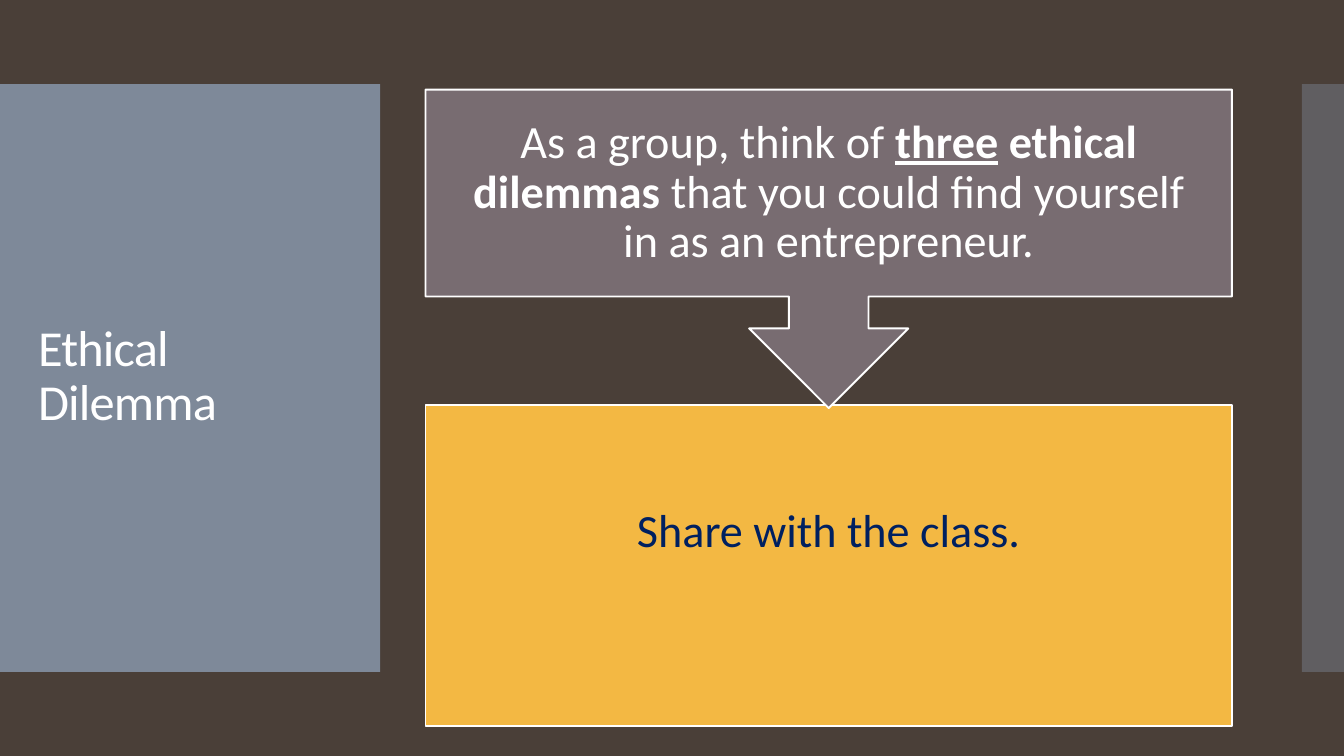
import pptx
import pptx.dml.color
import pptx.enum.shapes
import pptx.enum.text
import pptx.oxml.ns
import pptx.util
import lxml.etree

Pt = pptx.util.Pt
RGBColor = pptx.dml.color.RGBColor
MSO_SHAPE = pptx.enum.shapes.MSO_SHAPE
PP_ALIGN = pptx.enum.text.PP_ALIGN
MSO_ANCHOR = pptx.enum.text.MSO_ANCHOR

BROWN = RGBColor(0x4A, 0x3F, 0x38)
SLATE = RGBColor(0x81, 0x8E, 0x9F)
MAUVE = RGBColor(0x78, 0x6C, 0x71)
AMBER = RGBColor(0xF3, 0xB8, 0x43)
NAVY = RGBColor(0x00, 0x20, 0x60)
WHITE = RGBColor(0xFF, 0xFF, 0xFF)
FONT = "Calibri"

# Content: runs are (text, bold, underline)
TITLE = "Ethical Dilemma"
TASK = [
    ("As a group, think of ", False, False),
    ("three", True, True),
    (" ethical dilemmas ", True, False),
    ("that you could find yourself in as an entrepreneur.", False, False),
]
SHARE = [("Share with the class.", False, False)]

# Layout in points
SLIDE_WIDTH, SLIDE_HEIGHT = 960, 540
PANEL_TOP, PANEL_HEIGHT = 60, 420
PANELS = [(0, 271.5, 95), (930, 30, 40)]  # left, width, opacity in percent
STEP_LEFT, STEP_WIDTH = 304, 576
INSET = 18.7
STEPS = [  # shape, top, height, fill, text colour, runs, bottom inset
    (MSO_SHAPE.RECTANGLE, 289.5, 229, AMBER, NAVY, SHARE, 66),
    (MSO_SHAPE.DOWN_ARROW_CALLOUT, 64, 227.5, MAUVE, WHITE, TASK, INSET),
]


def add_block(slide, kind, left, top, width, height, color):
    shape = slide.shapes.add_shape(kind, Pt(left), Pt(top), Pt(width), Pt(height))
    shape.shadow.inherit = False
    shape.fill.solid()
    shape.fill.fore_color.rgb = color
    return shape


def add_run(paragraph, text, size, color, bold=False, underline=False):
    run = paragraph.add_run()
    run.text = text
    font = run.font
    font.name, font.size, font.bold, font.underline = FONT, Pt(size), bold, underline
    font.color.rgb = color
    return run


def set_opacity(shape, percent):
    color = shape.fill._xPr.find(".//" + pptx.oxml.ns.qn("a:srgbClr"))
    alpha = lxml.etree.SubElement(color, pptx.oxml.ns.qn("a:alpha"))
    alpha.set("val", str(percent * 1000))


def add_step(slide, kind, top, height, fill, color, runs, bottom_inset):
    shape = add_block(slide, kind, STEP_LEFT, top, STEP_WIDTH, height, fill)
    shape.line.color.rgb = WHITE
    shape.line.width = Pt(1.35)
    frame = shape.text_frame
    frame.word_wrap = True
    frame.vertical_anchor = MSO_ANCHOR.MIDDLE
    frame.margin_left = frame.margin_right = frame.margin_top = Pt(INSET)
    frame.margin_bottom = Pt(bottom_inset)
    paragraph = frame.paragraphs[0]
    paragraph.alignment = PP_ALIGN.CENTER
    paragraph.line_spacing = 0.9
    for text, bold, underline in runs:
        add_run(paragraph, text, 33, color, bold, underline)


def add_title(slide):
    title = slide.shapes.title
    title.left, title.top, title.width, title.height = Pt(20), Pt(88.5), Pt(232), Pt(362)
    frame = title.text_frame
    frame.word_wrap = True
    frame.auto_size = pptx.enum.text.MSO_AUTO_SIZE.NONE
    frame.vertical_anchor = MSO_ANCHOR.MIDDLE
    paragraph = frame.paragraphs[0]
    paragraph.alignment = PP_ALIGN.LEFT
    paragraph.line_spacing = 0.9
    run = add_run(paragraph, TITLE, 36, WHITE)
    run._r.get_or_add_rPr().set("spc", "-60")
    # Bring the title in front of the side panels
    slide.shapes._spTree.append(title._element)


def main():
    presentation = pptx.Presentation()
    presentation.slide_width = Pt(SLIDE_WIDTH)
    presentation.slide_height = Pt(SLIDE_HEIGHT)
    slide = presentation.slides.add_slide(presentation.slide_layouts[5])
    slide.background.fill.solid()
    slide.background.fill.fore_color.rgb = BROWN

    # Side panels
    for left, width, opacity in PANELS:
        panel = add_block(slide, MSO_SHAPE.RECTANGLE, left, PANEL_TOP, width, PANEL_HEIGHT, SLATE)
        panel.line.fill.background()
        set_opacity(panel, opacity)

    add_title(slide)

    # Steps, the callout last so that its arrow lies on top
    for step in STEPS:
        add_step(slide, *step)

    presentation.save("out.pptx")


if __name__ == "__main__":
    main()
